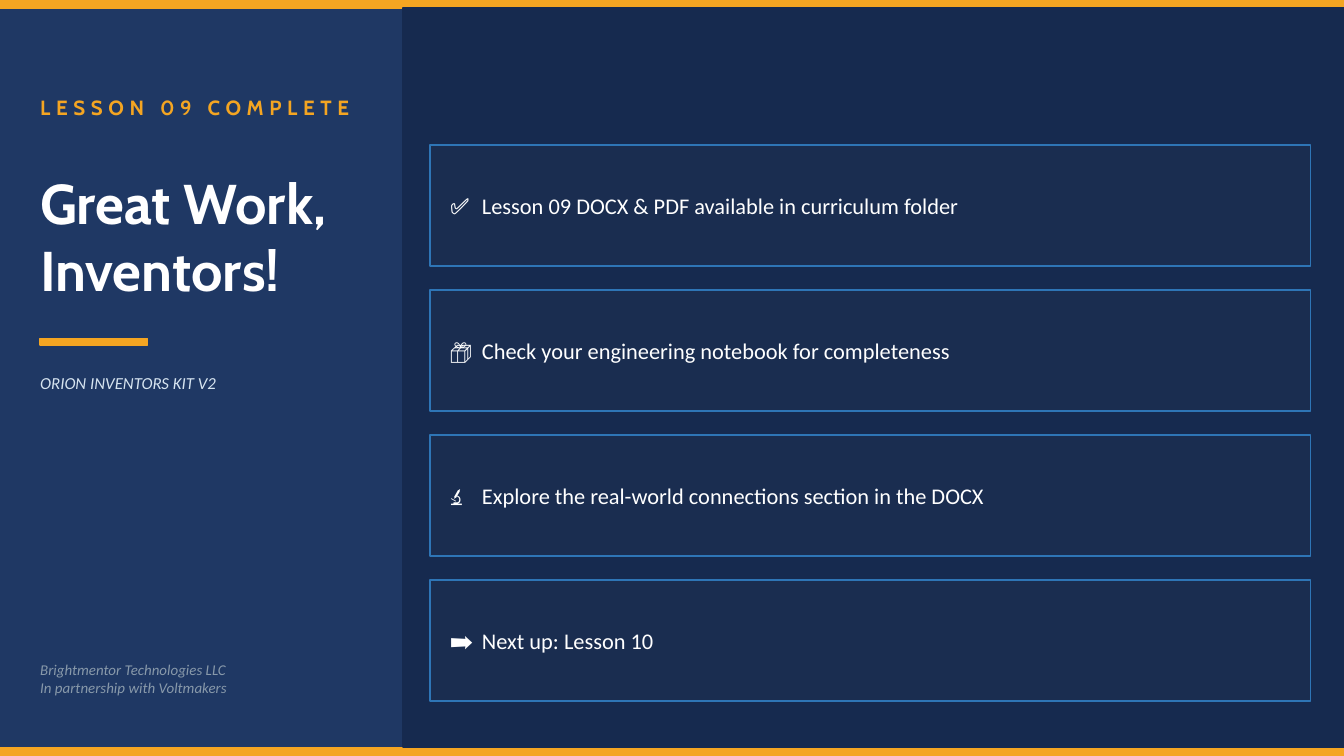
from pptx import Presentation
from pptx.dml.color import RGBColor
from pptx.enum import shapes, text
from pptx.util import Cm, Pt

COLORS = {
    "background": "1F3864",
    "panel": "162A4F",
    "card": "1A2D50",
    "card_border": "2E75B6",
    "accent": "F4A522",
    "white": "FFFFFF",
    "pale": "D6E4F0",
    "muted": "8899AA",
}

deck = Presentation()
deck.slide_width, deck.slide_height = Cm(25.4), Cm(14.29)
slide = deck.slides.add_slide(deck.slide_layouts[5])
slide.background.fill.solid()
slide.background.fill.fore_color.rgb = RGBColor.from_string(COLORS["background"])


def add_block(left, top, width, height, fill, border):
    block = slide.shapes.add_shape(
        shapes.MSO_SHAPE.RECTANGLE, Cm(left), Cm(top), Cm(width), Cm(height))
    block.shadow.inherit = False
    block.fill.solid()
    block.fill.fore_color.rgb = RGBColor.from_string(COLORS[fill])
    block.line.color.rgb = RGBColor.from_string(COLORS[border])
    block.line.width = Pt(1)


def write(words, left, top, width, height, size, font, color,
          bold=False, italic=False, holder=None):
    """Fill a placeholder, or a new text box, and return its text frame."""
    holder = holder or slide.shapes.add_textbox(0, 0, 0, 0)
    holder.left, holder.top = Cm(left), Cm(top)
    holder.width, holder.height = Cm(width), Cm(height)
    frame = holder.text_frame
    frame.word_wrap = True
    frame.auto_size = text.MSO_AUTO_SIZE.NONE
    frame.vertical_anchor = text.MSO_ANCHOR.MIDDLE
    frame.margin_left = frame.margin_right = 0
    frame.margin_top = frame.margin_bottom = 0
    frame.text = words
    for paragraph in frame.paragraphs:
        paragraph.alignment = text.PP_ALIGN.LEFT
        for run in paragraph.runs:
            run.font.size, run.font.name = Pt(size), font
            run.font.bold, run.font.italic = bold, italic
            run.font.color.rgb = RGBColor.from_string(COLORS[color])
    return frame


# Top and bottom bars, right-hand panel
for bar_top in (0, 14.14):
    add_block(0, bar_top, 25.4, 0.15, "accent", "accent")
add_block(7.62, 0.15, 17.78, 13.97, "panel", "panel")

# Left column
margin, column = 0.76, 6.35
eyebrow = write("LESSON 09 COMPLETE", margin, 1.52, column, 1.02,
                11, "Cabin", "accent", bold=True)
eyebrow.paragraphs[0].runs[0].font._element.set("spc", "300")
write("Great Work,\nInventors!", margin, 2.67, column, 3.56,
      30, "Cabin", "white", bold=True, holder=slide.shapes.title)
add_block(margin, 6.4, 2.03, 0.13, "accent", "accent")
write("ORION INVENTORS KIT V2", margin, 6.86, column, 0.76,
      9, "Calibri", "pale", italic=True)
write("Brightmentor Technologies LLC\nIn partnership with Voltmakers",
      margin, 12.19, column, 1.27, 8, "Calibri", "muted", italic=True)

# Next-step cards
steps = [
    ("✅", "Lesson 09 DOCX & PDF available in curriculum folder"),
    ("📦", "Check your engineering notebook for completeness"),
    ("🔬", "Explore the real-world connections section in the DOCX"),
    ("➡️", "Next up: Lesson 10"),
]
card_left, card_width, card_height = 8.13, 16.64, 2.29
first_top, pitch, padding = 2.74, 2.74, 0.38
icon_width = Cm(0.6)

for index, (icon, step) in enumerate(steps):
    card_top = first_top + index * pitch
    add_block(card_left, card_top, card_width, card_height, "card", "card_border")
    label = write(f"{icon}\t{step}", card_left + padding, card_top,
                  card_width - 2 * padding, card_height, 12, "Calibri", "white")
    # Hanging indent, so that the tab after the icon ends at the label
    properties = label.paragraphs[0]._p.get_or_add_pPr()
    properties.set("marL", str(icon_width))
    properties.set("indent", str(-icon_width))

deck.save("out.pptx")
